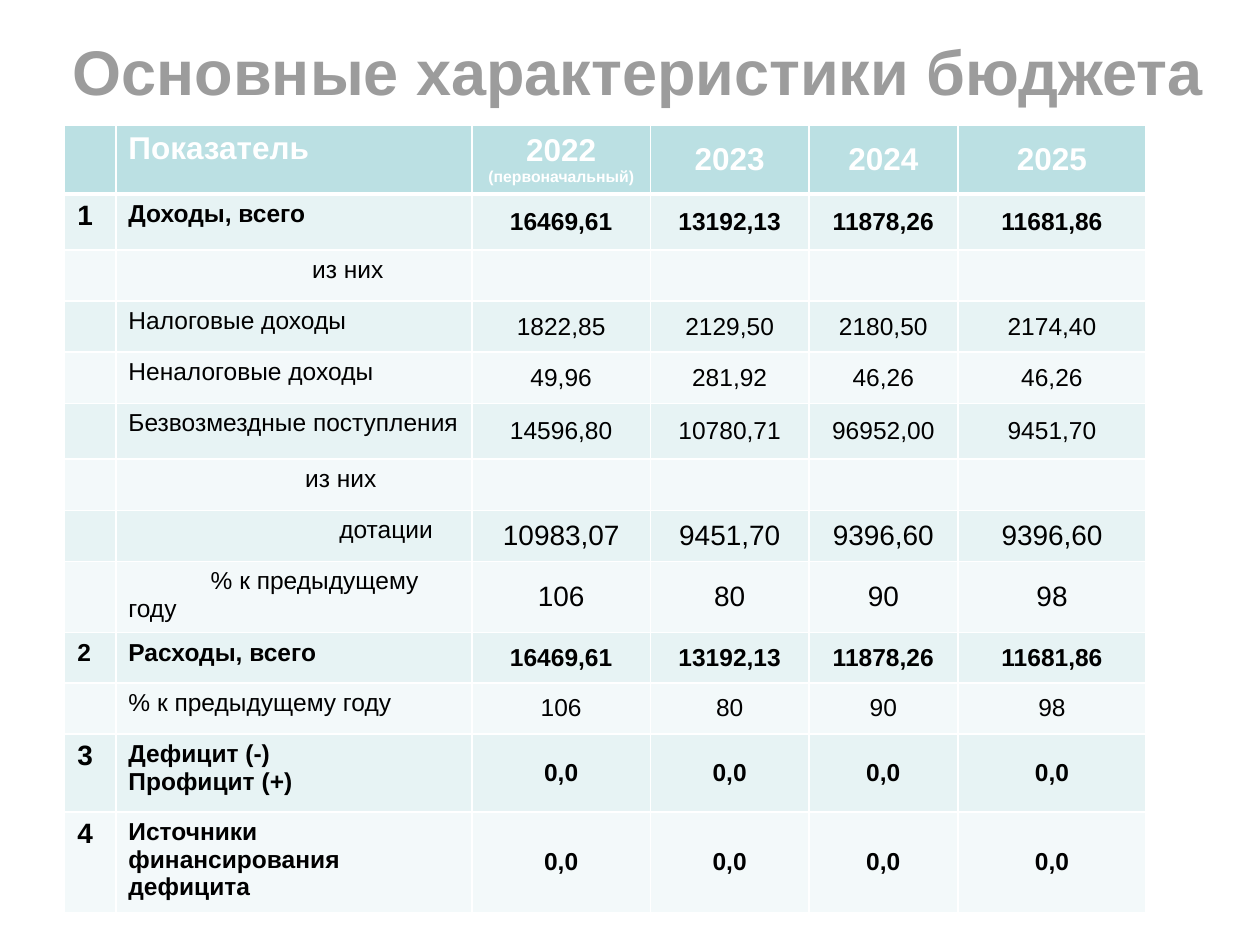
from lxml import etree
from pptx import Presentation
from pptx.dml.color import RGBColor
from pptx.enum import text
from pptx.oxml.ns import qn
from pptx.util import Pt

TITLE = "Основные характеристики бюджета"
HEADER = ("", "Показатель", "2022\n(первоначальный)", "2023", "2024", "2025")
TOTALS = ("16469,61", "13192,13", "11878,26", "11681,86")
GROWTH = ("106", "80", "90", "98")
EMPTY = ("",) * 4
ZERO = ("0,0",) * 4

# number, label, label indent, values, value size, row height
ROWS = [
    ("1", "Доходы, всего", 0, TOTALS, 14, 32),
    ("", "из них", 105, EMPTY, 14, 28.8),
    ("", "Налоговые доходы", 0, ("1822,85", "2129,50", "2180,50", "2174,40"), 14, 28.8),
    ("", "Неналоговые доходы", 0, ("49,96", "281,92", "46,26", "46,26"), 14, 28.8),
    ("", "Безвозмездные поступления", 0, ("14596,80", "10780,71", "96952,00", "9451,70"), 14, 32),
    ("", "из них", 101, EMPTY, 14, 28.8),
    ("", "дотации", 120.5, ("10983,07", "9451,70", "9396,60", "9396,60"), 16, 28.8),
    ("", "% к предыдущему году", 47, GROWTH, 16, 40.6),
    ("2", "Расходы, всего", 0, TOTALS, 14, 28.8),
    ("", "% к предыдущему году", 0, GROWTH, 14, 28.8),
    ("3", "Дефицит (-)\nПрофицит (+)", 0, ZERO, 14, 44.6),
    ("4", "Источники финансирования дефицита", 0, ZERO, 14, 57.6),
]
NUMBER_SIZES = {"2": 14}
COLUMN_WIDTHS = (29.2, 203.4, 102.2, 90.4, 85.2, 107.6)
HEADER_HEIGHT = 39.4
TABLE_LEFT, TABLE_TOP = 37, 71.5
COLORS = {"title": "9C9C9C", "header": "BBE0E3", "odd": "E7F3F4",
          "even": "F3F9FA", "line": "FFFFFF", "text": "000000"}


def add_run(paragraph, content, size, color, bold):
    """Add one formatted run to a paragraph."""
    run = paragraph.add_run()
    run.text = content
    run.font.name = "Arial"
    run.font.size = Pt(size)
    run.font.bold = bold
    run.font.color.rgb = RGBColor.from_string(COLORS[color])


def set_borders(cell, top, bottom):
    """Draw the four cell borders with the given top and bottom widths."""
    properties = cell._tc.get_or_add_tcPr()
    for side, width in (("L", 1), ("R", 1), ("T", top), ("B", bottom)):
        line = etree.SubElement(properties, qn(f"a:ln{side}"), w=str(Pt(width)))
        fill = etree.SubElement(line, qn("a:solidFill"))
        etree.SubElement(fill, qn("a:srgbClr"), val=COLORS["line"])


def fill_cell(cell, content, sizes, color, bold, centered, indent=0):
    """Write the lines of a cell, one paragraph each."""
    if centered:
        cell.vertical_anchor = text.MSO_ANCHOR.MIDDLE
    if not content:
        return
    frame = cell.text_frame
    for index, line in enumerate(content.split("\n")):
        paragraph = frame.paragraphs[0] if index == 0 else frame.add_paragraph()
        paragraph.alignment = text.PP_ALIGN.CENTER if centered else text.PP_ALIGN.LEFT
        if indent:
            paragraph._p.get_or_add_pPr().set("indent", str(Pt(indent)))
        add_run(paragraph, line, sizes[min(index, len(sizes) - 1)], color, bold)


def add_title(slide):
    """Place and format the slide title."""
    title = slide.shapes.title
    title.left, title.top, title.width, title.height = map(Pt, (31, 15, 667, 51))
    frame = title.text_frame
    frame.word_wrap = False
    frame.auto_size = text.MSO_AUTO_SIZE.NONE
    frame.vertical_anchor = text.MSO_ANCHOR.TOP
    paragraph = frame.paragraphs[0]
    paragraph.alignment = text.PP_ALIGN.CENTER
    add_run(paragraph, TITLE, 36, "title", True)


def add_budget_table(slide):
    """Build the budget table."""
    heights = [HEADER_HEIGHT] + [row[-1] for row in ROWS]
    table = slide.shapes.add_table(
        len(heights), len(COLUMN_WIDTHS), Pt(TABLE_LEFT), Pt(TABLE_TOP),
        Pt(sum(COLUMN_WIDTHS)), Pt(sum(heights))).table
    table.first_row = table.horz_banding = False
    for column, width in zip(table.columns, COLUMN_WIDTHS):
        column.width = Pt(width)
    for index, (row, height) in enumerate(zip(table.rows, heights)):
        row.height = Pt(height)
        band = "header" if index == 0 else "odd" if index % 2 else "even"
        for cell in row.cells:
            set_borders(cell, 3 if index == 1 else 1, 3 if index == 0 else 1)
            cell.fill.solid()
            cell.fill.fore_color.rgb = RGBColor.from_string(COLORS[band])

    for column, content in enumerate(HEADER):
        fill_cell(table.cell(0, column), content, (18, 9), "line", True, column > 1)
    for index, (number, label, indent, values, size, _) in enumerate(ROWS, 1):
        bold = bool(number)
        number_size = NUMBER_SIZES.get(number, 16)
        fill_cell(table.cell(index, 0), number, (number_size,), "text", bold, False)
        fill_cell(table.cell(index, 1), label, (14,), "text", bold, False, indent)
        for column, value in enumerate(values, 2):
            fill_cell(table.cell(index, column), value, (size,), "text", bold, True)


def main():
    """Build and save the slide."""
    presentation = Presentation()
    presentation.slide_width, presentation.slide_height = Pt(720), Pt(540)
    slide = presentation.slides.add_slide(presentation.slide_layouts[5])
    add_title(slide)
    add_budget_table(slide)
    presentation.save("out.pptx")


if __name__ == "__main__":
    main()
